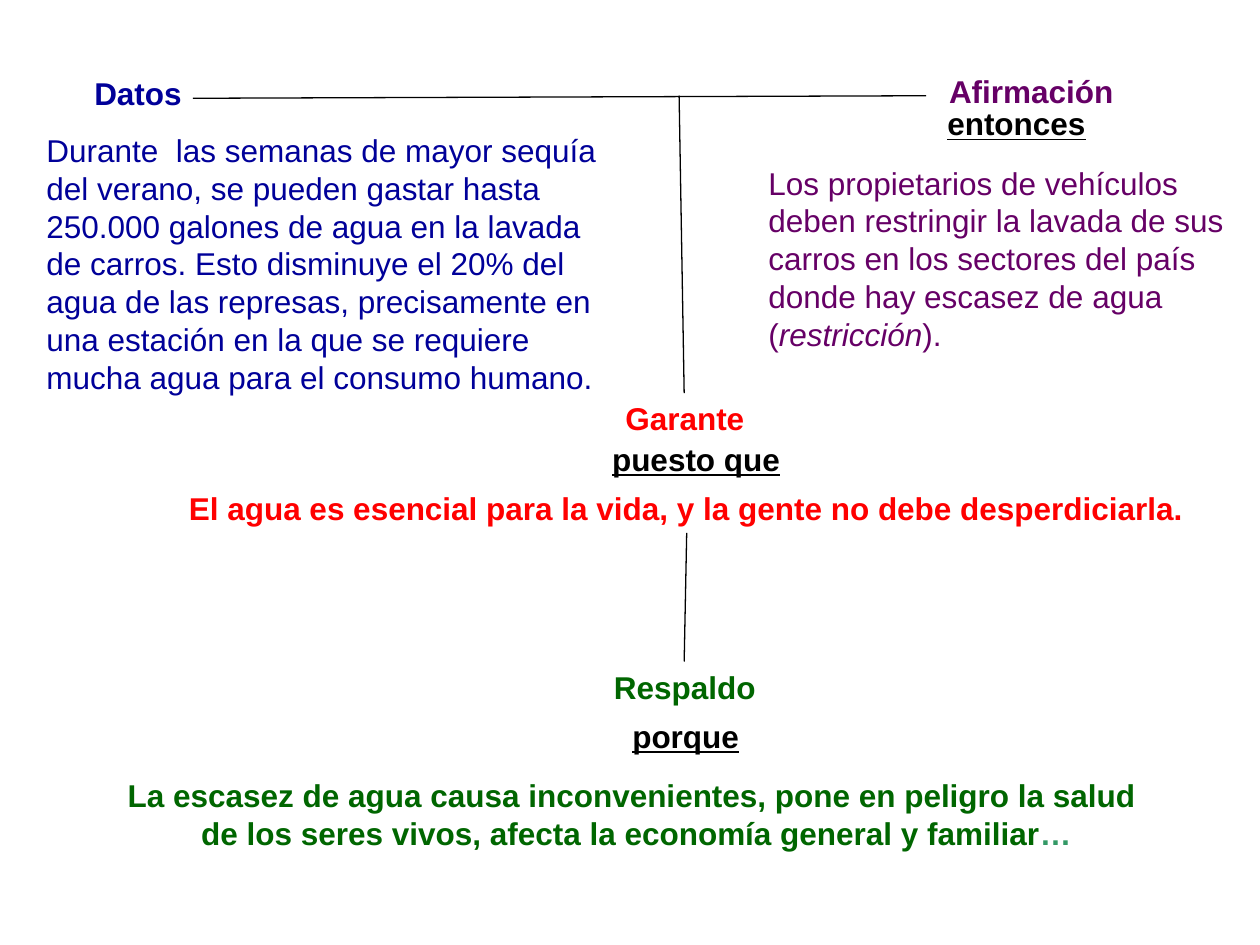
from dataclasses import dataclass

from lxml.etree import SubElement
from pptx import Presentation
from pptx.dml.color import RGBColor
from pptx.enum.shapes import MSO_CONNECTOR
from pptx.enum.text import MSO_AUTO_SIZE, PP_ALIGN
from pptx.oxml.ns import qn
from pptx.util import Inches, Pt


@dataclass(frozen=True)
class Theme:
    font: str = "Arial"
    size: int = 18
    line_width: float = 0.75
    black: str = "000000"
    data: str = "000099"
    claim: str = "660066"
    warrant: str = "FF0000"
    backing: str = "006600"
    ellipsis: str = "339966"


THEME = Theme()

# Headings of the argument: text, box, colour, centred
HEADINGS = [
    ("Datos", (0.65, 0.54, 0.9, 0.4), THEME.data, False),
    ("Afirmación", (7.36, 0.52, 1.65, 0.4), THEME.claim, True),
    ("Garante", (4.69, 3.12, 1.49, 0.4), THEME.warrant, True),
    ("Respaldo", (4.61, 5.25, 1.65, 0.4), THEME.backing, True),
]

# Underlined linking words: text, box
LINKS = [
    ("entonces", (7.42, 0.78, 1.3, 0.4)),
    ("puesto que", (4.76, 3.44, 1.53, 0.4)),
    ("porque", (4.92, 5.64, 1.05, 0.4)),
]

# Statements: paragraphs, box, colour, wrapped, bold and centred
STATEMENTS = [
    (["Durante  las semanas de mayor sequía del verano, se pueden gastar hasta "
      "250.000 galones de agua en la lavada de carros. Esto disminuye el 20% del "
      "agua de las represas, precisamente en una estación en la que se requiere "
      "mucha agua para el consumo humano."],
     (0.27, 0.99, 4.65, 2.2), THEME.data, True, False),
    (["Los propietarios de vehículos",
      "deben restringir la lavada de sus",
      "carros en los sectores del país",
      "donde hay escasez de agua",
      ["(", ("restricción", {"italic": True}), ")."]],
     (6, 1.25, 3.81, 1.6), THEME.claim, False, False),
    (["El agua es esencial para la vida, y la gente no debe desperdiciarla."],
     (1.4, 3.83, 8.09, 0.4), THEME.warrant, False, True),
    (["La escasez de agua causa inconvenientes, pone en peligro la salud ",
      ["de los seres vivos, afecta la economía general y familiar",
       ("…", {"color": THEME.ellipsis})]],
     (0.85, 6.11, 8.4, 0.7), THEME.backing, False, True),
]

# Lines: start, end
LINES = [
    ((1.53, 0.78), (7.35, 0.76)),  # data to claim
    ((5.43, 3.12), (5.39, 0.76)),  # warrant up to the main line
    ((5.45, 4.23), (5.43, 5.25)),  # warrant to backing
]


def add_text(slide, paragraphs, box, color, bold=False, centered=False,
             underline=False, wrap=False):
    frame = slide.shapes.add_textbox(*map(Inches, box)).text_frame
    frame.word_wrap = wrap
    frame.auto_size = MSO_AUTO_SIZE.SHAPE_TO_FIT_TEXT
    for index, content in enumerate(paragraphs):
        paragraph = frame.add_paragraph() if index else frame.paragraphs[0]
        paragraph.alignment = PP_ALIGN.CENTER if centered else PP_ALIGN.LEFT
        font = paragraph.font
        font.name, font.size = THEME.font, Pt(THEME.size)
        font.bold, font.underline = bold, underline
        font.color.rgb = RGBColor.from_string(color)
        for piece in [content] if isinstance(content, str) else content:
            text, style = (piece, {}) if isinstance(piece, str) else piece
            run = paragraph.add_run()
            run.text = text
            if "italic" in style:
                run.font.italic = style["italic"]
            if "color" in style:
                run.font.color.rgb = RGBColor.from_string(style["color"])


def add_line(slide, start, end):
    line = slide.shapes.add_connector(
        MSO_CONNECTOR.STRAIGHT, *map(Inches, start + end))
    line.line.color.rgb = RGBColor.from_string(THEME.black)
    line.line.width = Pt(THEME.line_width)
    SubElement(line._element.spPr, qn("a:effectLst"))  # no shadow


def main():
    presentation = Presentation()
    presentation.slide_width, presentation.slide_height = Inches(10), Inches(7.5)
    slide = presentation.slides.add_slide(presentation.slide_layouts[6])

    for text, box, color, centered in HEADINGS:
        add_text(slide, [text], box, color, bold=True, centered=centered)
    for text, box in LINKS:
        add_text(slide, [text], box, THEME.black, bold=True, underline=True)
    for paragraphs, box, color, wrap, emphatic in STATEMENTS:
        add_text(slide, paragraphs, box, color, bold=emphatic,
                 centered=emphatic, wrap=wrap)
    for start, end in LINES:
        add_line(slide, start, end)

    presentation.save("out.pptx")


if __name__ == "__main__":
    main()
